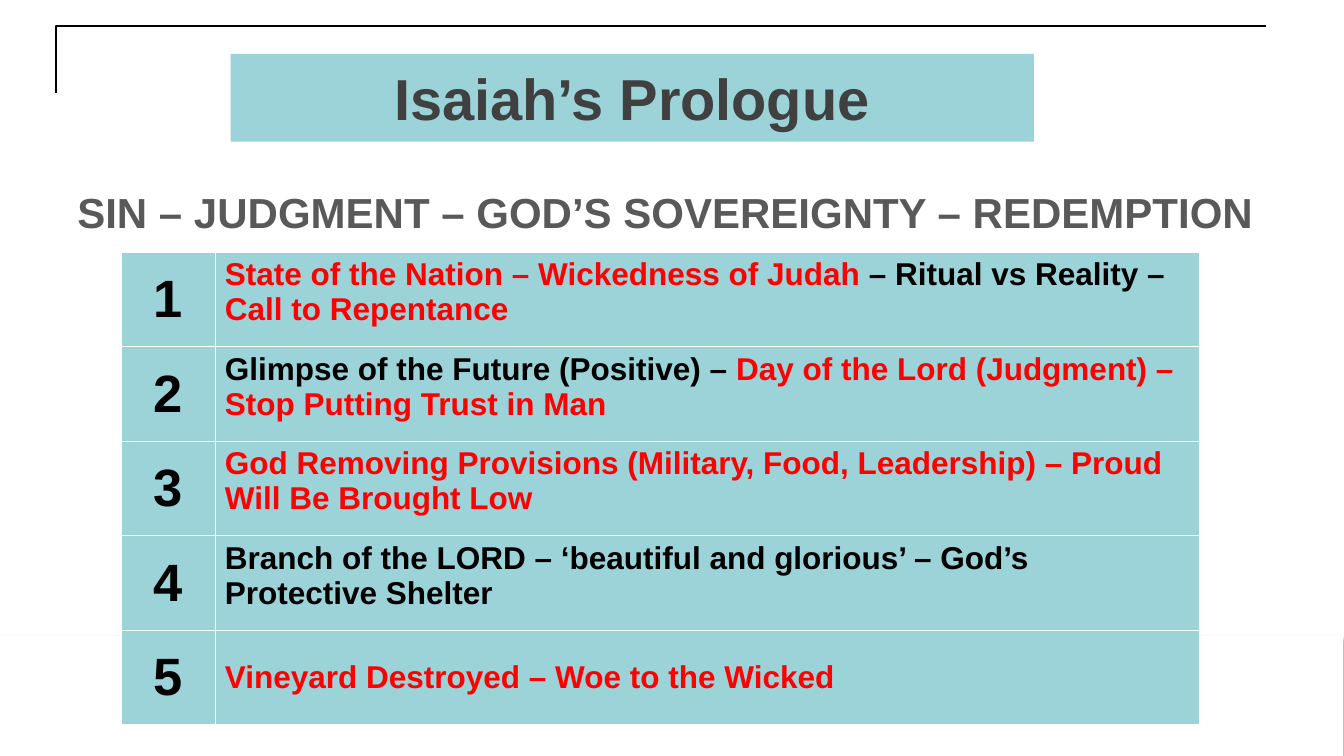
from dataclasses import dataclass

from lxml import etree
from pptx import Presentation
from pptx.dml.color import RGBColor
from pptx.enum import shapes, text
from pptx.oxml import ns
from pptx.util import Inches, Pt


@dataclass(frozen=True)
class Theme:
    font: str = "Arial"
    teal: str = "9BD3D9"
    white: str = "FFFFFF"
    black: str = "000000"
    red: str = "FF0000"
    dark: str = "404040"
    gray: str = "595959"
    head: int = 44
    number: int = 40
    motto: int = 32
    body: int = 24


THEME = Theme()
RED, BLACK = THEME.red, THEME.black
ROWS = [
    [("State of the Nation – Wickedness of Judah ", RED),
     ("– Ritual vs Reality – ", BLACK), ("Call to Repentance", RED)],
    [("Glimpse of the Future (Positive) – ", BLACK),
     ("Day of the Lord (Judgment) – Stop Putting Trust in Man", RED)],
    [("God Removing Provisions (Military, Food, Leadership) – "
      "Proud Will Be Brought Low", RED)],
    [("Branch of the LORD – ‘beautiful and glorious’ – "
      "God’s Protective Shelter", BLACK)],
    [("Vineyard Destroyed – Woe to the Wicked", RED)],
]


def rgb(code):
    return RGBColor.from_string(code)


def paint(item, color):
    item.fill.solid()
    item.fill.fore_color.rgb = rgb(color)


def write(frame, runs, size, align=text.PP_ALIGN.LEFT):
    para = frame.paragraphs[0]
    para.alignment = align
    para.font.name = THEME.font
    para.font.size = Pt(size)
    para.font.bold = True
    for words, color in runs:
        run = para.add_run()
        run.text = words
        run.font.color.rgb = rgb(color)


def add_corner(slide):
    pen = slide.shapes.build_freeform(Inches(0.59), Inches(0.98), scale=1.0)
    points = [(0.59, 0.27), (13.39, 0.27)]
    pen.add_line_segments([(Inches(x), Inches(y)) for x, y in points], close=False)
    corner = pen.convert_to_shape()
    corner.shadow.inherit = False
    corner.fill.background()
    corner.line.color.rgb = rgb(BLACK)
    corner.line.width = Pt(1.5)


def add_box(slide, left, top, width, height, color):
    box = slide.shapes.add_shape(
        shapes.MSO_SHAPE.RECTANGLE,
        Inches(left), Inches(top), Inches(width), Inches(height))
    box.shadow.inherit = False
    paint(box, color)
    box.line.fill.background()
    return box


def add_title(slide):
    box = add_box(slide, 2.44, 0.57, 8.5, 0.93, THEME.teal)
    box.text_frame.vertical_anchor = text.MSO_ANCHOR.MIDDLE
    write(box.text_frame, [("Isaiah’s Prologue", THEME.dark)], THEME.head,
          text.PP_ALIGN.CENTER)


def add_band(slide):
    band = add_box(slide, -0.01, 6.73, 14.22, 1.27, THEME.white)
    effects = band._element.spPr.find(ns.qn("a:effectLst"))
    shade = etree.SubElement(
        effects, ns.qn("a:outerShdw"), blurRad=str(Pt(3.1)),
        dist=str(Pt(1.8)), dir="5400000", rotWithShape="0")
    tint = etree.SubElement(shade, ns.qn("a:srgbClr"), val=BLACK)
    etree.SubElement(tint, ns.qn("a:alpha"), val="35000")


def add_motto(slide):
    box = slide.shapes.add_textbox(
        Inches(0.72), Inches(1.92), Inches(12.76), Inches(0.64))
    box.text_frame.word_wrap = False
    box.text_frame.auto_size = text.MSO_AUTO_SIZE.SHAPE_TO_FIT_TEXT
    write(box.text_frame,
          [("SIN – JUDGMENT – GOD’S SOVEREIGNTY – REDEMPTION", THEME.gray)],
          THEME.motto)


def style_cell(cell, anchor):
    paint(cell, THEME.teal)
    cell.vertical_anchor = anchor
    props = cell._tc.get_or_add_tcPr()
    for spot, side in enumerate("LRTB"):
        line = etree.Element(ns.qn(f"a:ln{side}"), w=str(Pt(1)))
        fill = etree.SubElement(line, ns.qn("a:solidFill"))
        etree.SubElement(fill, ns.qn("a:srgbClr"), val=THEME.white)
        props.insert(spot, line)


def add_grid(slide):
    frame = slide.shapes.add_table(
        len(ROWS), 2, Inches(1.28), Inches(2.67), Inches(11.41), Inches(5))
    table = frame.table
    table.first_row = False
    table.horz_banding = False
    for column, width in zip(table.columns, (1, 10.41)):
        column.width = Inches(width)
    middle, top = text.MSO_ANCHOR.MIDDLE, text.MSO_ANCHOR.TOP
    for index, runs in enumerate(ROWS):
        table.rows[index].height = Inches(1)
        number, topic = table.cell(index, 0), table.cell(index, 1)
        style_cell(number, middle)
        style_cell(topic, middle if index == len(ROWS) - 1 else top)
        write(number.text_frame, [(str(index + 1), BLACK)], THEME.number,
              text.PP_ALIGN.CENTER)
        write(topic.text_frame, runs, THEME.body)


def main():
    deck = Presentation()
    deck.slide_width, deck.slide_height = Inches(14.22), Inches(8)
    slide = deck.slides.add_slide(deck.slide_layouts[6])
    add_corner(slide)
    add_title(slide)
    add_band(slide)
    add_motto(slide)
    add_grid(slide)
    deck.save("out.pptx")


if __name__ == "__main__":
    main()
